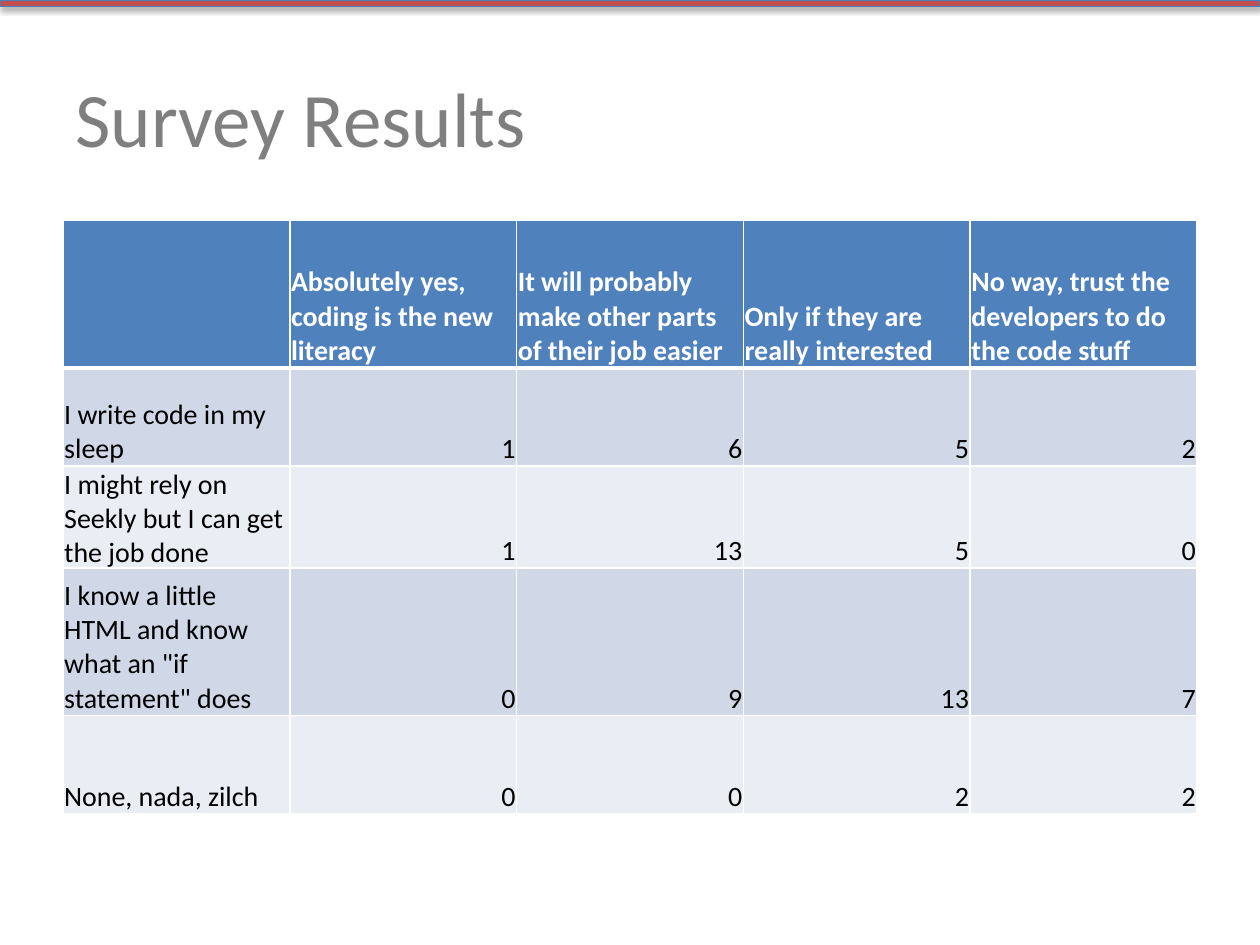
from lxml.etree import SubElement
from pptx import Presentation
from pptx.dml.color import RGBColor
from pptx.enum.shapes import MSO_SHAPE
from pptx.enum.text import MSO_ANCHOR, PP_ALIGN
from pptx.oxml.ns import qn
from pptx.util import Inches, Pt

FONT = "Calibri"
WHITE = RGBColor(0xFF, 0xFF, 0xFF)
BLACK = RGBColor(0x00, 0x00, 0x00)
TITLE_GRAY = RGBColor(0x7F, 0x7F, 0x7F)
RED = RGBColor(0xC0, 0x50, 0x4D)
BAR_EDGE = RGBColor(0x4B, 0x7E, 0xBC)
HEADER_BLUE = RGBColor(0x4F, 0x81, 0xBD)
BANDS = (RGBColor(0xD0, 0xD8, 0xE8), RGBColor(0xE9, 0xED, 0xF4))

ANSWERS = [
    "",
    "Absolutely yes, coding is the new literacy",
    "It will probably make other parts of their job easier",
    "Only if they are really interested",
    "No way, trust the developers to do the code stuff",
]
RESPONSES = [
    ("I write code in my sleep", 1, 6, 5, 2),
    ("I might rely on Seekly but I can get the job done", 1, 13, 5, 0),
    ('I know a little HTML and know what an "if statement" does', 0, 9, 13, 7),
    ("None, nada, zilch", 0, 0, 2, 2),
]
ROW_HEIGHTS = (1.17, 0.78, 0.79, 1.17, 0.78)


def add_run(paragraph, text, size, color, bold=False):
    run = paragraph.add_run()
    run.text = text
    run.font.name = FONT
    run.font.size = Pt(size)
    run.font.bold = bold
    run.font.color.rgb = color


def add_top_bar(slide, left, top, width, height):
    bar = slide.shapes.add_shape(MSO_SHAPE.RECTANGLE, left, top, width, height)
    bar.fill.solid()
    bar.fill.fore_color.rgb = RED
    bar.line.color.rgb = BAR_EDGE
    bar.line.width = Pt(0.75)
    bar.shadow.inherit = False
    effects = bar._element.spPr.find(qn("a:effectLst"))
    shadow = SubElement(effects, qn("a:outerShdw"), blurRad=str(Pt(3.1)),
                        dist=str(Pt(1.8)), dir="5400000", rotWithShape="0")
    shade = SubElement(shadow, qn("a:srgbClr"), val=str(BLACK))
    SubElement(shade, qn("a:alpha"), val="35000")


def add_title(slide, left, top, width, height):
    frame = slide.shapes.add_textbox(left, top, width, height).text_frame
    frame.word_wrap = True
    frame.vertical_anchor = MSO_ANCHOR.MIDDLE
    add_run(frame.paragraphs[0], "Survey Results", 44, TITLE_GRAY)


def add_borders(cell, top, bottom):
    """Draw white cell edges; top and bottom are widths in points."""
    properties = cell._tc.get_or_add_tcPr()
    for side, width in (("L", 1), ("R", 1), ("T", top), ("B", bottom)):
        edge = SubElement(properties, qn(f"a:ln{side}"), w=str(Pt(width)))
        fill = SubElement(edge, qn("a:solidFill"))
        SubElement(fill, qn("a:srgbClr"), val=str(WHITE))


def style_cell(cell, row):
    cell.margin_left = cell.margin_right = cell.margin_top = Inches(0.01)
    cell.margin_bottom = 0
    cell.vertical_anchor = MSO_ANCHOR.BOTTOM
    # The thick rule under the header belongs to both rows that meet there.
    add_borders(cell, top=3 if row == 1 else 1, bottom=3 if row == 0 else 1)
    cell.fill.solid()
    cell.fill.fore_color.rgb = BANDS[(row - 1) % 2] if row else HEADER_BLUE


def add_survey_table(slide, left, top, width):
    rows = [ANSWERS, *RESPONSES]
    table = slide.shapes.add_table(len(rows), len(ANSWERS), left, top, width,
                                   Inches(sum(ROW_HEIGHTS))).table
    table.first_row = table.horz_banding = False
    for column in table.columns:
        column.width = width // len(ANSWERS)
    for r, (values, height) in enumerate(zip(rows, ROW_HEIGHTS)):
        table.rows[r].height = Inches(height)
        for c, value in enumerate(values):
            cell = table.cell(r, c)
            style_cell(cell, r)
            if value == "":
                continue
            paragraph = cell.text_frame.paragraphs[0]
            if isinstance(value, int):
                paragraph.alignment = PP_ALIGN.RIGHT
            add_run(paragraph, str(value), 16, BLACK if r else WHITE, bold=r == 0)


def main():
    presentation = Presentation()
    presentation.slide_width = Inches(10)
    presentation.slide_height = Inches(7.5)
    slide = presentation.slides.add_slide(presentation.slide_layouts[6])
    add_top_bar(slide, 0, 0, presentation.slide_width, Inches(0.05))
    add_title(slide, Inches(0.5), Inches(0.3), Inches(9), Inches(1.25))
    add_survey_table(slide, Inches(0.5), Inches(1.75), Inches(9))
    presentation.save("out.pptx")


if __name__ == "__main__":
    main()
